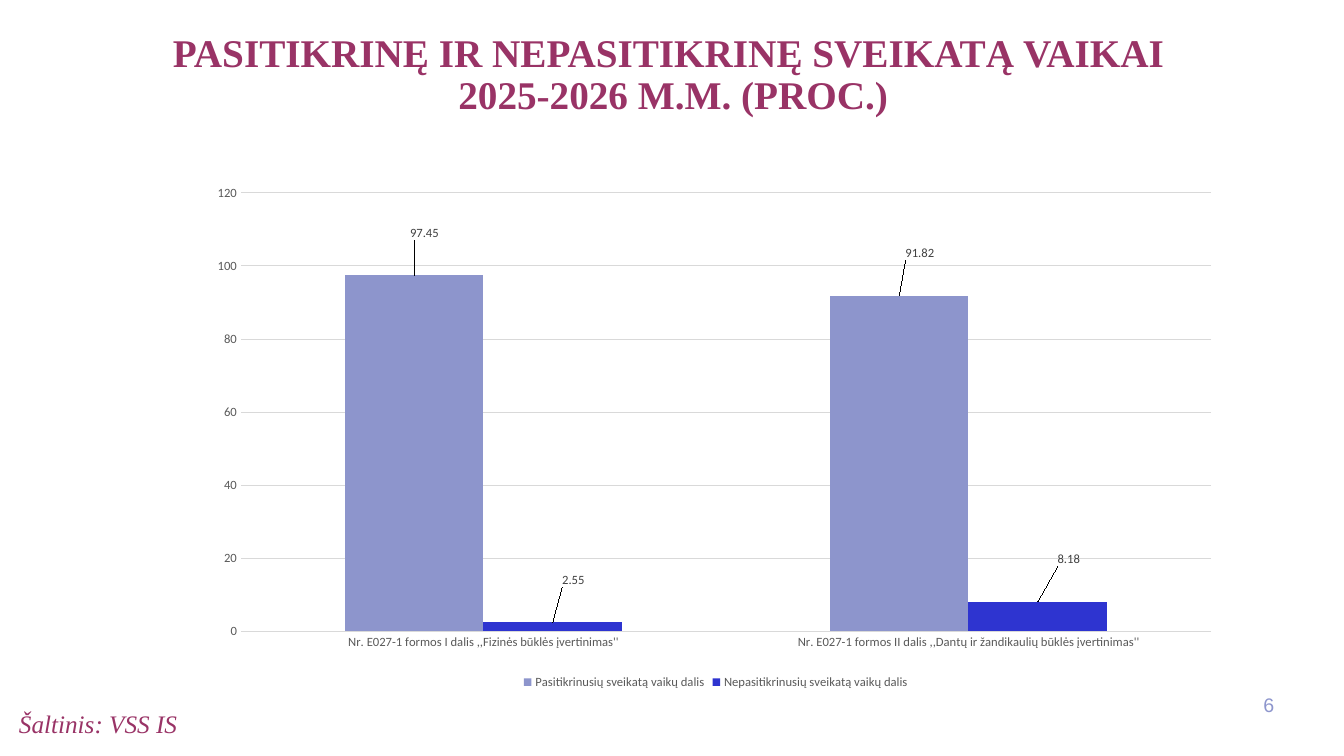
from dataclasses import dataclass

from lxml.etree import SubElement
from pptx import Presentation
from pptx.chart.chart import Chart
from pptx.chart.data import CategoryChartData
from pptx.dml.color import RGBColor
from pptx.enum.chart import XL_CHART_TYPE, XL_LABEL_POSITION, XL_LEGEND_POSITION, XL_TICK_MARK
from pptx.enum.text import MSO_ANCHOR, MSO_AUTO_SIZE, PP_ALIGN
from pptx.oxml.ns import qn
from pptx.util import Emu, Inches, Pt

COLUMNS, ROWS = 160, 90
WIDTH, HEIGHT = Inches(13.33), Inches(7.5)
PLUM, GREY = "993366", "595959"
SERIF = "Times New Roman"
CATEGORIES = (
    "Nr. E027-1 formos I dalis ,,Fizinės būklės įvertinimas''",
    "Nr. E027-1 formos II dalis ,,Dantų ir žandikaulių būklės įvertinimas''",
)


@dataclass(frozen=True)
class Area:
    """A rectangle in grid columns and rows."""

    column: float
    row: float
    columns: float
    rows: float

    def lengths(self) -> tuple[Emu, Emu, Emu, Emu]:
        """Return left, top, width and height on the slide."""
        across, down = WIDTH / COLUMNS, HEIGHT / ROWS
        return (Emu(round(self.column * across)), Emu(round(self.row * down)),
                Emu(round(self.columns * across)), Emu(round(self.rows * down)))


@dataclass(frozen=True)
class CheckupSeries:
    """One bar series with the label shifts as shares of the chart."""

    name: str
    values: tuple[float, ...]
    color: str
    label_shifts: tuple[float, ...]


@dataclass(frozen=True)
class Caption:
    """A small text at the foot of the slide."""

    text: str
    area: Area
    style: dict


TITLE_AREA = Area(-1.44, 3.36, 162, 16.56)
CHART_AREA = Area(23.76, 21.12, 122.88, 61.44)
LABEL_RISE = -0.06
SERIES = (
    CheckupSeries("Pasitikrinusių sveikatą vaikų dalis", (97.45, 91.82), "8D95CC", (0.01, 0.02)),
    CheckupSeries("Nepasitikrinusių sveikatą vaikų dalis", (2.55, 8.18), "2E34D0", (0.02, 0.03)),
)
CAPTIONS = (
    Caption("Šaltinis: VSS IS", Area(1.08, 83.76, 75.6, 4.56),
            dict(size=18, name=SERIF, color=PLUM, italic=True)),
    Caption("6", Area(146.64, 81.48, 6.24, 4.8),
            dict(size=14, name="Arial", color="8E96CD", align=PP_ALIGN.RIGHT,
                 anchor=MSO_ANCHOR.MIDDLE)),
)


def rgb(value: str) -> RGBColor:
    """Turn a hex string into a colour."""
    return RGBColor.from_string(value)


def format_font(font, *, size: float, color: str, name: str = "Calibri",
                bold: bool = False, italic: bool = False) -> None:
    """Set the look of a font."""
    font.size, font.name, font.bold, font.italic = Pt(size), name, bold, italic
    font.color.rgb = rgb(color)


def write_text(shape, text: str, *, align=PP_ALIGN.LEFT, anchor=MSO_ANCHOR.TOP,
               line_spacing: float = 1.0, **style) -> None:
    """Write one formatted paragraph into a shape."""
    frame = shape.text_frame
    frame.word_wrap, frame.auto_size = True, MSO_AUTO_SIZE.NONE
    frame.vertical_anchor = anchor
    frame.text = text
    paragraph = frame.paragraphs[0]
    paragraph.alignment, paragraph.line_spacing = align, line_spacing
    for run in paragraph.runs:
        format_font(run.font, **style)


def set_layout(parent, index: int, **settings) -> None:
    """Give a chart element a manual layout."""
    for previous in parent.findall(qn("c:layout")):
        parent.remove(previous)
    layout = SubElement(parent, qn("c:layout"))
    manual = SubElement(layout, qn("c:manualLayout"))
    for tag, value in settings.items():
        SubElement(manual, qn(f"c:{tag}")).set("val", str(value))
    parent.insert(index, layout)


def style_axes(chart: Chart) -> None:
    """Format both axes and the gridlines."""
    for axis in (chart.category_axis, chart.value_axis):
        axis.major_tick_mark = axis.minor_tick_mark = XL_TICK_MARK.NONE
        axis.format.line.fill.background()
        format_font(axis.tick_labels.font, size=9, color=GREY)
    value_axis = chart.value_axis
    value_axis.minimum_scale, value_axis.maximum_scale, value_axis.major_unit = 0, 120, 20
    gridline = value_axis.major_gridlines.format.line
    gridline.color.rgb, gridline.width = rgb("D9D9D9"), Pt(0.75)


def style_series(chart: Chart) -> None:
    """Colour the bars and place their labels."""
    for series, checkup in zip(chart.plots[0].series, SERIES):
        series.format.fill.solid()
        series.format.fill.fore_color.rgb = rgb(checkup.color)
        series.invert_if_negative = False
        for index in range(len(checkup.values)):
            label = series.points[index].data_label
            format_font(label.font, size=9, color="404040")
            label.position = XL_LABEL_POSITION.OUTSIDE_END
    shifts = [shift for checkup in SERIES for shift in checkup.label_shifts]
    for element, shift in zip(chart._chartSpace.iter(qn("c:dLbl")), shifts):
        set_layout(element, 1, x=shift, y=LABEL_RISE)


def add_checkup_chart(slide) -> None:
    """Add the clustered column chart."""
    data = CategoryChartData()
    data.categories = CATEGORIES
    for checkup in SERIES:
        data.add_series(checkup.name, checkup.values)
    chart = slide.shapes.add_chart(
        XL_CHART_TYPE.COLUMN_CLUSTERED, *CHART_AREA.lengths(), data).chart
    format_font(chart.font, size=10, color="000000")
    chart.has_title = False
    chart.has_legend = True
    chart.legend.position = XL_LEGEND_POSITION.BOTTOM
    chart.legend.include_in_layout = False
    format_font(chart.legend.font, size=9, color=GREY)
    plot = chart.plots[0]
    plot.gap_width, plot.overlap, plot.vary_by_categories = 150, 0, False
    style_axes(chart)
    style_series(chart)
    plot_area = chart._chartSpace.find(f".//{qn('c:plotArea')}")
    set_layout(plot_area, 0, layoutTarget="inner", xMode="edge", yMode="edge",
               x=0.04, y=0.03, w=0.94, h=0.85)


def main() -> None:
    """Build and save the slide."""
    presentation = Presentation()
    presentation.slide_width, presentation.slide_height = WIDTH, HEIGHT
    slide = presentation.slides.add_slide(presentation.slide_layouts.get_by_name("Title Only"))
    title = slide.shapes.title
    title.left, title.top, title.width, title.height = TITLE_AREA.lengths()
    write_text(title, "PASITIKRINĘ IR NEPASITIKRINĘ SVEIKATĄ VAIKAI\v 2025-2026 M.M. (PROC.)",
               size=28, name=SERIF, color=PLUM, bold=True,
               align=PP_ALIGN.CENTER, line_spacing=0.9)
    for caption in CAPTIONS:
        textbox = slide.shapes.add_textbox(*caption.area.lengths())
        write_text(textbox, caption.text, **caption.style)
    add_checkup_chart(slide)
    presentation.save("out.pptx")


if __name__ == "__main__":
    main()
